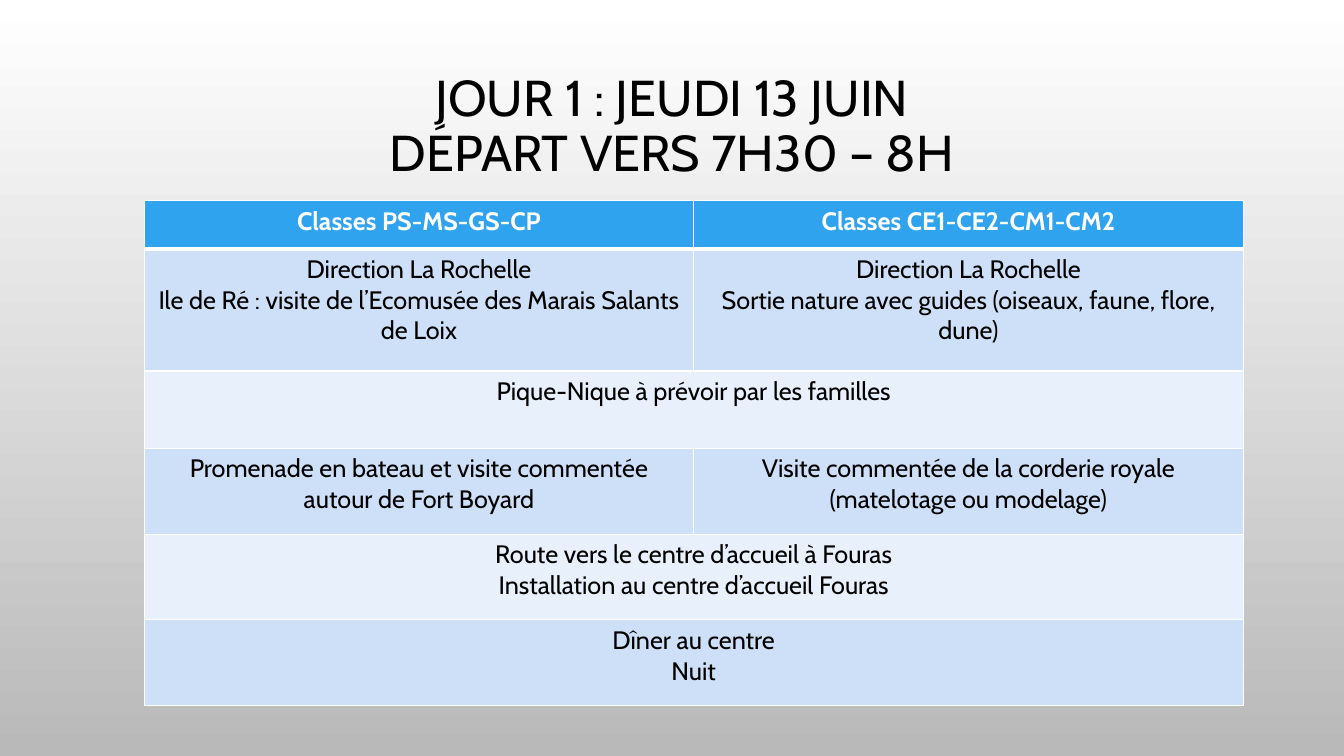
from pptx import Presentation
from pptx.dml.color import RGBColor as Rgb
from pptx.enum.text import MSO_ANCHOR as Anchor, MSO_AUTO_SIZE as Auto, PP_ALIGN as Align
from pptx.oxml import parse_xml
from pptx.oxml.ns import nsdecls
from pptx.util import Inches, Pt

HUES = {"white": "FFFFFF", "grey": "B9B9B9", "black": "000000",
        "head": "2FA3EE", "dark": "CDE0F8", "light": "E8F0FC"}
COLS = [5.45, 5.45]
ROWS = [
    (0.48, ["Classes PS-MS-GS-CP", "Classes CE1-CE2-CM1-CM2"]),
    (1.21, ["Direction La Rochelle\n"
            "Ile de Ré : visite de l’Ecomusée des Marais Salants de Loix",
            "Direction La Rochelle\n"
            "Sortie nature avec guides (oiseaux, faune, flore, dune)"]),
    (0.77, ["Pique-Nique à prévoir par les familles"]),
    (0.85, ["Promenade en bateau et visite commentée autour de Fort Boyard",
            "Visite commentée de la corderie royale (matelotage ou modelage)"]),
    (0.85, ["Route vers le centre d’accueil à Fouras\n"
            "Installation au centre d’accueil Fouras"]),
    (0.85, ["Dîner au centre\nNuit"]),
]


def style(frame, size, hue, bold=False):
    """Centre every paragraph and format its runs."""
    form = {"name": "Cabin", "size": Pt(size), "bold": bold}
    for para in frame.paragraphs:
        para.alignment = Align.CENTER
        for run in para.runs:
            for key, value in form.items():
                setattr(run.font, key, value)
            run.font.color.rgb = Rgb.from_string(HUES[hue])


def edge(cell, side, width):
    cell._tc.get_or_add_tcPr().append(parse_xml(
        f'<a:ln{side} {nsdecls("a")} w="{Pt(width)}"><a:solidFill>'
        f'<a:srgbClr val="{HUES["white"]}"/></a:solidFill></a:ln{side}>'))


deck = Presentation()
deck.slide_width, deck.slide_height = Inches(13.33), Inches(7.5)
slide = deck.slides.add_slide(deck.slide_layouts[5])

back = slide.background.fill
back.gradient()
back.gradient_angle = 270
for stop, place, hue in zip(back.gradient_stops, (0, 1), ("white", "grey")):
    stop.position = place
    stop.color.rgb = Rgb.from_string(HUES[hue])

title = slide.shapes.title
box = {"left": 1, "top": 0.39, "width": 11.33, "height": 1.75}
for key, value in box.items():
    setattr(title, key, Inches(value))
frame = title.text_frame
frame.auto_size = Auto.NONE
frame.word_wrap = True
frame.vertical_anchor = Anchor.MIDDLE
frame.paragraphs[0].text = "JOUR 1 : JEUDI 13 JUIN\nDÉPART VERS 7H30 – 8H"
frame.paragraphs[0].line_spacing = 0.9
style(frame, 36, "black")

high = sum(height for height, _ in ROWS)
table = slide.shapes.add_table(
    len(ROWS), len(COLS), Inches(1.43), Inches(1.99),
    Inches(sum(COLS)), Inches(high)).table
for col, width in zip(table.columns, COLS):
    col.width = Inches(width)

for r, (height, texts) in enumerate(ROWS):
    table.rows[r].height = Inches(height)
    fill = "head" if r == 0 else "dark" if r % 2 else "light"
    for c in range(len(COLS)):
        cell = table.cell(r, c)
        for side in "LRTB":
            thick = (r, side) in [(0, "B"), (1, "T")]
            edge(cell, side, 3 if thick else 1)
        cell.fill.solid()
        cell.fill.fore_color.rgb = Rgb.from_string(HUES[fill])
    if len(texts) == 1:
        table.cell(r, 0).merge(table.cell(r, 1))
    for c, text in enumerate(texts):
        cell = table.cell(r, c)
        cell.text = text
        style(cell.text_frame, 18, "black" if r else "white", r == 0)

deck.save("out.pptx")
